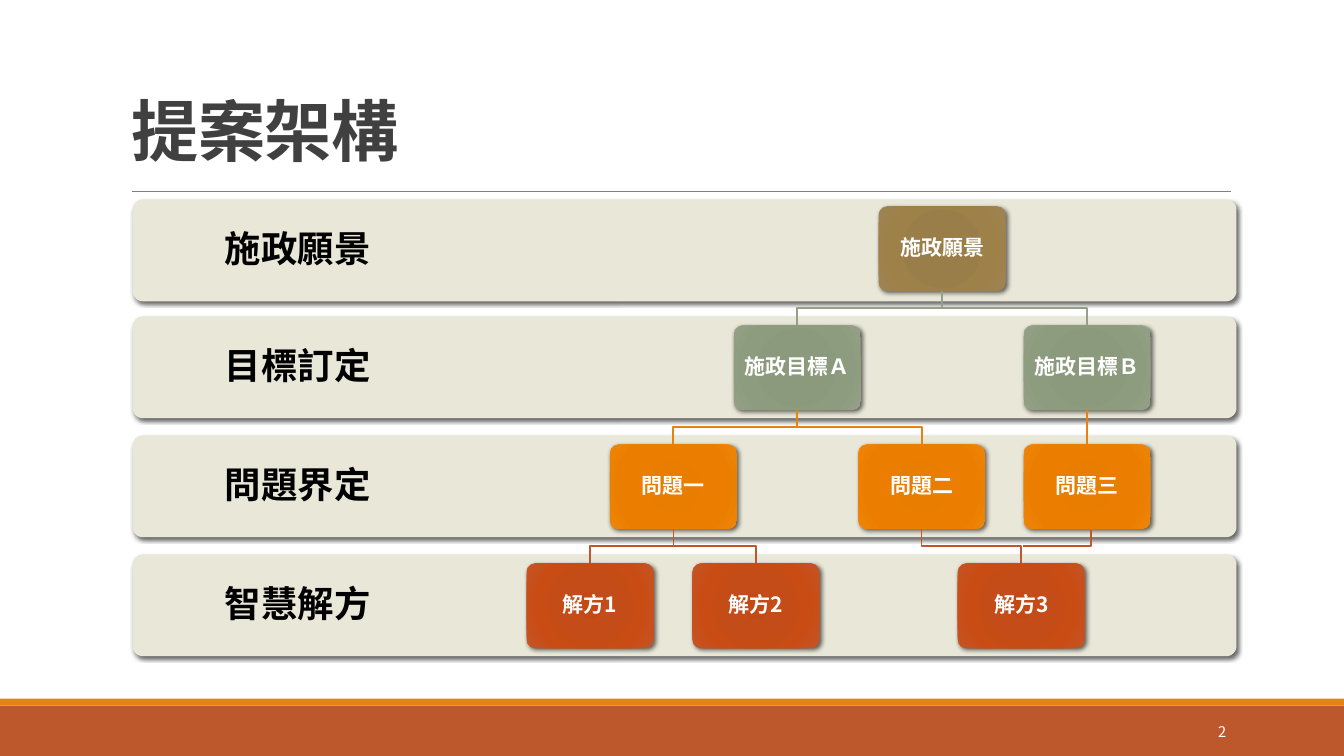
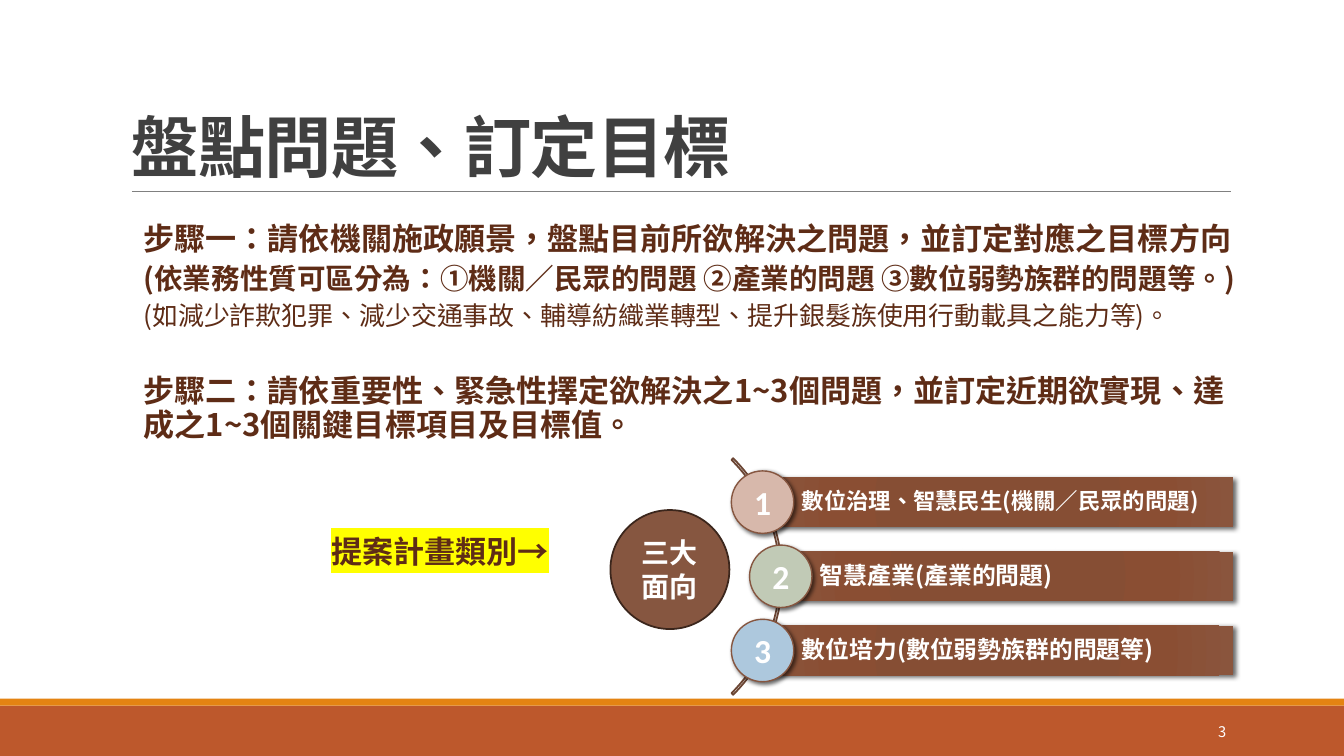
from dataclasses import dataclass

from pptx import Presentation
from pptx.dml.color import RGBColor
from pptx.enum.shapes import MSO_CONNECTOR, MSO_SHAPE
from pptx.enum.text import MSO_ANCHOR, PP_ALIGN
from pptx.oxml import parse_xml
from pptx.oxml.ns import nsdecls, qn
from pptx.util import Pt

RECT, ROUND, OVAL, ARC = (MSO_SHAPE.RECTANGLE, MSO_SHAPE.ROUNDED_RECTANGLE,
                          MSO_SHAPE.OVAL, MSO_SHAPE.BLOCK_ARC)
STRAIGHT = MSO_CONNECTOR.STRAIGHT
LEFT, CENTER, RIGHT = PP_ALIGN.LEFT, PP_ALIGN.CENTER, PP_ALIGN.RIGHT
MIDDLE, BOTTOM = MSO_ANCHOR.MIDDLE, MSO_ANCHOR.BOTTOM


@dataclass(frozen=True)
class Theme:
    font: str = "Noto Sans CJK SC"
    number_font: str = "Calibri"
    white: str = "FFFFFF"
    black: str = "000000"
    title: str = "404040"
    rule: str = "808080"
    footer: str = "BD582C"
    strip: str = "E48312"
    band: str = "E9E7D8"
    body: str = "5E2C16"
    highlight: str = "FFFF00"
    hub: str = "865640"
    hub_line: str = "3B261C"
    arc: str = "6B4533"
    # Gradients hold the colours of the four stops
    tan: tuple = ("9A7D48", "9A7E4A", "9E8049", "9E8454")
    sage: tuple = ("8A987B", "8B997D", "8D9C7E", "94A187")
    orange: tuple = ("E57B00", "E87D00", "EB7E00", "EF8407")
    rust: tuple = ("C44A15", "C34C18", "C94C15", "C45525")
    brown: tuple = ("874C32", "864E34", "8A4E33", "8A553D")
    sage_line: str = "94A088"
    title_size: float = 48
    label_size: float = 26
    node_size: float = 15
    page_size: float = 10.5
    step_size: float = 22.2
    scope_size: float = 20.4
    example_size: float = 18.5
    hub_size: float = 20
    number_size: float = 24


T = Theme()


def paint(shape, fill=None, line=None, width=1.25, blur=None):
    """Set fill (colour, gradient tuple or None), outline and shadow blur."""
    spPr = shape.element.spPr
    if isinstance(fill, tuple):
        stops = "".join(f'<a:gs pos="{pos}000"><a:srgbClr val="{color}"/></a:gs>'
                        for pos, color in zip((0, 34, 70, 100), fill))
        shape.fill.gradient()
        spPr.replace(spPr.find(qn("a:gradFill")), parse_xml(
            f'<a:gradFill {nsdecls("a")} rotWithShape="1"><a:gsLst>{stops}</a:gsLst>'
            '<a:path path="circle"><a:fillToRect l="100000" t="100000" r="100000" '
            'b="100000"/></a:path></a:gradFill>'))
    elif fill:
        shape.fill.solid()
        shape.fill.fore_color.rgb = RGBColor.from_string(fill)
    else:
        shape.fill.background()
    if line:
        shape.line.color.rgb = RGBColor.from_string(line)
        shape.line.width = Pt(width)
    else:
        shape.line.fill.background()
    shape.shadow.inherit = False
    if blur:
        spPr.find(qn("a:effectLst")).append(parse_xml(
            f'<a:outerShdw {nsdecls("a")} blurRad="{Pt(blur)}" dist="{Pt(2)}" '
            'dir="2700000" algn="tl" rotWithShape="0"><a:srgbClr val="000000">'
            '<a:alpha val="60000"/></a:srgbClr></a:outerShdw>'))


def write(p, text, size, color, bold=True, align=LEFT, spacing=0.9, font=T.font):
    """Fill a paragraph; the language gives Traditional Chinese punctuation."""
    p.text = text
    p.alignment = align
    p.line_spacing = spacing
    f = p.font
    f.name, f.size, f.bold = font, Pt(size), bold
    f.color.rgb = RGBColor.from_string(color)
    defRPr = p._p.pPr.find(qn("a:defRPr"))
    defRPr.append(parse_xml(f'<a:ea {nsdecls("a")} typeface="{font}"/>'))
    p.runs[0]._r.get_or_add_rPr().set("lang", "zh-TW")


prs = Presentation()
prs.slide_width, prs.slide_height = Pt(960), Pt(540)
layout = prs.slide_layouts[5]

# Titles and page numbers
slides = []
for number, title, top in ((2, "提案架構", 11), (3, "盤點問題、訂定目標", 22.3)):
    s = prs.slides.add_slide(layout)
    slides.append(s)
    ph = s.shapes.title
    ph.left, ph.top, ph.width, ph.height = Pt(87), Pt(top), Pt(811), Pt(114.5)
    ph.text_frame.vertical_anchor = BOTTOM
    p = ph.text_frame.paragraphs[0]
    write(p, title, T.title_size, T.title, spacing=0.85)
    p._p.pPr.find(qn("a:defRPr")).set("spc", "-50")

    tb = s.shapes.add_textbox(Pt(780), Pt(508.3), Pt(103), Pt(28.8))
    tf = tb.text_frame
    tf.word_wrap = True
    tf.vertical_anchor = MIDDLE
    write(tf.paragraphs[0], str(number), T.page_size, T.white, False, RIGHT, 1)

framework, steps = slides

# Footer bands and title rule, moved to the layout so that both slides share them
for top, height, color in ((504, 36, T.footer), (499, 5, T.strip)):
    sp = framework.shapes.add_shape(RECT, 0, Pt(top), Pt(960), Pt(height))
    paint(sp, color)
    layout.shapes.element.append(sp.element)
rule = framework.shapes.add_connector(STRAIGHT, Pt(94.3), Pt(136.8), Pt(879), Pt(136.8))
rule.line.color.rgb = RGBColor.from_string(T.rule)
rule.line.width = Pt(0.5)
rule.element.spPr.append(parse_xml(f'<a:effectLst {nsdecls("a")}/>'))
layout.shapes.element.append(rule.element)

# Slide 2: four bands with a tree of nodes
BAND_W, LABEL_W, LABEL_INSET = 788.5, 236, 14.4
NODE_W, NODE_H, NODE_TOP, ROW_STEP = 90.7, 60.5, 147.5, 85
levels = (
    ("施政願景", 142.5, T.tan, (("施政願景", 673),)),
    ("目標訂定", 226, T.sage, (("施政目標Ａ", 569.5), ("施政目標Ｂ", 776.5))),
    ("問題界定", 311, T.orange, (("問題一", 481), ("問題二", 658.3), ("問題三", 776.5))),
    ("智慧解方", 396, T.rust, (("解方1", 421.5), ("解方2", 540), ("解方3", 729.5))),
)
for label, top, _, _ in levels:
    band = framework.shapes.add_shape(ROUND, Pt(94.7), Pt(top), Pt(BAND_W), Pt(72.7))
    band.adjustments[0] = 0.1
    paint(band, T.band, blur=3)
    tf = band.text_frame
    tf.vertical_anchor = MIDDLE
    tf.margin_left = Pt(LABEL_INSET)
    tf.margin_right = Pt(BAND_W - LABEL_W + LABEL_INSET)
    write(tf.paragraphs[0], label, T.label_size, T.black, align=CENTER)

centers = {}
for row, (_, _, fill, nodes) in enumerate(levels):
    for i, (text, x) in enumerate(nodes):
        y = NODE_TOP + row * ROW_STEP
        centers[row, i] = x
        node = framework.shapes.add_shape(ROUND, Pt(x - NODE_W / 2), Pt(y),
                                          Pt(NODE_W), Pt(NODE_H))
        node.adjustments[0] = 0.1
        paint(node, fill, blur=3.5)
        tf = node.text_frame
        tf.vertical_anchor = MIDDLE
        tf.margin_left = tf.margin_right = Pt(6)
        write(tf.paragraphs[0], text, T.node_size, T.white, align=CENTER)

# Links: parent row, parent index, child index
link_colors = (T.sage_line, T.strip, T.footer)
polylines = []
for row, parent, child in ((0, 0, 0), (0, 0, 1), (1, 0, 0), (1, 0, 1), (1, 1, 2),
                           (2, 0, 0), (2, 0, 1), (2, 1, 2)):
    x1, x2 = centers[row, parent], centers[row + 1, child]
    y1 = NODE_TOP + row * ROW_STEP + NODE_H
    y2 = NODE_TOP + (row + 1) * ROW_STEP
    middle = (y1 + y2) / 2
    points = [(x1, y1), (x2, y2)]
    if x1 != x2:
        points[1:1] = [(x1, middle), (x2, middle)]
    polylines.append((points, link_colors[row]))
polylines.append(([(779.5, 378.5), (779.5, 390.2), (731, 390.2)], T.footer))

for points, color in polylines:
    if len(points) == 2:
        (x1, y1), (x2, y2) = points
        link = framework.shapes.add_connector(STRAIGHT, Pt(x1), Pt(y1), Pt(x2), Pt(y2))
        link.line.color.rgb = RGBColor.from_string(color)
        link.line.width = Pt(1.25)
        link.element.spPr.append(parse_xml(f'<a:effectLst {nsdecls("a")}/>'))
    else:
        corners = [(Pt(x), Pt(y)) for x, y in points]
        builder = framework.shapes.build_freeform(*corners[0])
        builder.add_line_segments(corners[1:], close=False)
        paint(builder.convert_to_shape(), line=color)

# Slide 3: the two steps
tb = steps.shapes.add_textbox(Pt(95.5), Pt(156), Pt(794), Pt(280))
tf = tb.text_frame
tf.word_wrap = True
paragraphs = (
    ("步驟一：請依機關施政願景，盤點目前所欲解決之問題，並訂定對應之目標方向",
     T.step_size, True, 0),
    ("(依業務性質可區分為：①機關／民眾的問題 ②產業的問題 ③數位弱勢族群的問題等。)",
     T.scope_size, True, 5.5),
    ("(如減少詐欺犯罪、減少交通事故、輔導紡織業轉型、提升銀髮族使用行動載具之能力等)。",
     T.example_size, False, 5.5),
    ("步驟二：請依重要性、緊急性擇定欲解決之1~3個問題，並訂定近期欲實現、"
     "達成之1~3個關鍵目標項目及目標值。", T.step_size, True, 32),
    ("提案計畫類別→", T.step_size, True, 67),
)
for i, (text, size, bold, before) in enumerate(paragraphs):
    p = tf.add_paragraph() if i else tf.paragraphs[0]
    write(p, text, size, T.body, bold)
    p.space_before = Pt(before)
p._p.pPr.set("marL", str(Pt(134)))
p.runs[0]._r.get_or_add_rPr().append(parse_xml(
    f'<a:highlight {nsdecls("a")}><a:srgbClr val="{T.highlight}"/></a:highlight>'))

# Slide 3: three categories around the hub
arc = steps.shapes.add_shape(ARC, Pt(319.7), Pt(292.3), Pt(239), Pt(239))
for i, value in enumerate((189, 27, 0.007)):
    arc.adjustments[i] = value
paint(arc, line=T.arc)

BAR_RIGHT, BAR_H, BAR_TOP, BAR_STEP, DISC = 881, 35.3, 341, 53, 44.6
categories = (
    ("數位治理、智慧民生(機關／民眾的問題)", 16, 544.7, "D7B8AB"),
    ("智慧產業(產業的問題)", 17, 557.7, "C1CAB6"),
    ("數位培力(數位弱勢族群的問題等)", 17, 544.7, "ADC8DD"),
)
for i, (text, size, x, color) in enumerate(categories):
    y = BAR_TOP + i * BAR_STEP
    bar = steps.shapes.add_shape(RECT, Pt(x), Pt(y), Pt(BAR_RIGHT - x), Pt(BAR_H))
    paint(bar, T.brown, blur=3.5)
    tf = bar.text_frame
    tf.vertical_anchor = MIDDLE
    tf.margin_left, tf.margin_right = Pt(28), Pt(3)
    write(tf.paragraphs[0], text, size, T.white)

    disc = steps.shapes.add_shape(OVAL, Pt(x - DISC / 2), Pt(y + (BAR_H - DISC) / 2),
                                  Pt(DISC), Pt(DISC))
    paint(disc, color, T.hub, 1, blur=3)
    tf = disc.text_frame
    tf.vertical_anchor = MIDDLE
    tf.margin_left = tf.margin_right = tf.margin_top = tf.margin_bottom = 0
    write(tf.paragraphs[0], str(i + 1), T.number_size, T.white, align=CENTER,
          spacing=1, font=T.number_font)

hub = steps.shapes.add_shape(OVAL, Pt(436), Pt(364.3), Pt(85), Pt(85))
paint(hub, T.hub, T.hub_line)
tf = hub.text_frame
tf.vertical_anchor = MIDDLE
write(tf.paragraphs[0], "三大面向", T.hub_size, T.white, align=CENTER, spacing=1)

prs.save("out.pptx")
